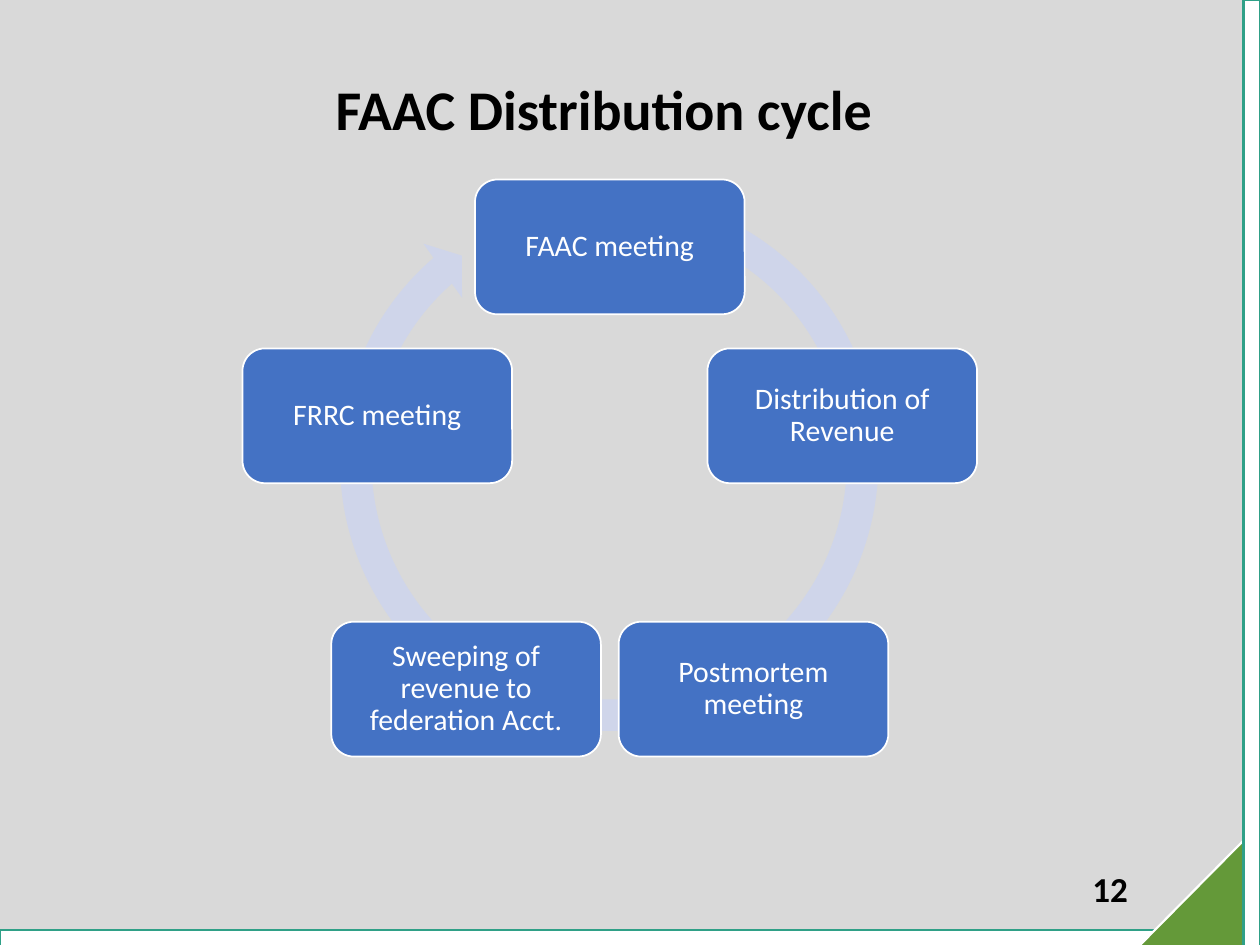
import math
from dataclasses import dataclass

import pptx
import pptx.dml.color
import pptx.enum.shapes
import pptx.enum.text
import pptx.util

Inches = pptx.util.Inches
Pt = pptx.util.Pt
Shape = pptx.enum.shapes.MSO_SHAPE
Align = pptx.enum.text.PP_ALIGN

COLOURS = {
    "background": "D9D9D9",
    "white": "FFFFFF",
    "teal": "2FA087",
    "green": "649939",
    "arrow": "CFD5EA",
    "step": "4472C4",
    "black": "000000",
}
STEPS = [
    "FAAC meeting",
    "Distribution of Revenue",
    "Postmortem meeting",
    "Sweeping of revenue to federation Acct.",
    "FRRC meeting",
]
CENTRE_X, CENTRE_Y, RADIUS = 4.84, 3.9, 1.94
STEP_WIDTH, STEP_HEIGHT = 2.14, 1.07


@dataclass(frozen=True)
class Box:
    left: float
    top: float
    width: float
    height: float

    def lengths(self) -> list:
        return [Inches(value) for value in (self.left, self.top, self.width, self.height)]


@dataclass(frozen=True)
class Figure:
    kind: Shape
    box: Box
    fill: str
    line: str = ""
    line_width: float = 1.25
    rotation: float = 0
    adjustments: tuple = ()


@dataclass(frozen=True)
class Label:
    text: str
    size: float
    colour: str
    bold: bool = False
    alignment: Align = Align.CENTER
    line_spacing: float = 1.0
    inset_x: float = 0.1
    inset_y: float = 0.05


FRAME = [
    Figure(Shape.RECTANGLE, Box(0, 7.38, 10, 0.13), "white", "teal"),
    Figure(Shape.RIGHT_TRIANGLE, Box(8.88, 6.63, 1.04, 1.03), "green", "white", rotation=270),
    Figure(Shape.RECTANGLE, Box(9.87, 0, 0.13, 7.75), "white", "teal"),
]
CYCLE_ARROW = Figure(
    Shape.CIRCULAR_ARROW,
    Box(2.56, 1.39, 4.55, 4.55),
    "arrow",
    adjustments=(0.055, 3.307, 137.364, 174.101, 0.058),
)
TEXTS = [
    (Box(8.42, 6.85, 0.63, 0.4), Label("12", 20, "black", True, Align.RIGHT)),
    (Box(0.92, 0.4, 7.75, 0.91), Label("FAAC Distribution cycle", 32, "black", True)),
]


def rgb(name: str) -> pptx.dml.color.RGBColor:
    """Return the named colour."""
    return pptx.dml.color.RGBColor.from_string(COLOURS[name])


def apply(target, values: dict) -> None:
    """Set every attribute in values on the target."""
    for name, value in values.items():
        setattr(target, name, value)


def draw_figure(slide, figure: Figure):
    """Draw a filled preset shape."""
    shape = slide.shapes.add_shape(figure.kind, *figure.box.lengths())
    shape.shadow.inherit = False
    shape.rotation = figure.rotation
    for index, value in enumerate(figure.adjustments):
        shape.adjustments[index] = value
    shape.fill.solid()
    shape.fill.fore_color.rgb = rgb(figure.fill)
    if figure.line:
        shape.line.color.rgb = rgb(figure.line)
        shape.line.width = Pt(figure.line_width)
    else:
        shape.line.fill.background()
    return shape


def write_label(shape, label: Label) -> None:
    """Write one formatted paragraph into a shape."""
    frame = shape.text_frame
    apply(frame, {
        "word_wrap": True,
        "vertical_anchor": pptx.enum.text.MSO_ANCHOR.MIDDLE,
        "margin_left": Inches(label.inset_x),
        "margin_right": Inches(label.inset_x),
        "margin_top": Inches(label.inset_y),
        "margin_bottom": Inches(label.inset_y),
    })
    paragraph = frame.paragraphs[0]
    apply(paragraph, {"alignment": label.alignment, "line_spacing": label.line_spacing})
    run = paragraph.add_run()
    run.text = label.text
    apply(run.font, {"name": "Calibri", "size": Pt(label.size), "bold": label.bold})
    run.font.color.rgb = rgb(label.colour)


def draw_step(slide, index: int, text: str) -> None:
    """Draw one step, spaced evenly clockwise from the top of the cycle."""
    angle = 2 * math.pi * index / len(STEPS)
    box = Box(
        CENTRE_X + RADIUS * math.sin(angle) - STEP_WIDTH / 2,
        CENTRE_Y - RADIUS * math.cos(angle) - STEP_HEIGHT / 2,
        STEP_WIDTH,
        STEP_HEIGHT,
    )
    shape = draw_figure(slide, Figure(Shape.ROUNDED_RECTANGLE, box, "step", "white", 1))
    write_label(shape, Label(text, 17, "white", line_spacing=0.9, inset_x=0.12, inset_y=0.12))


def main() -> None:
    """Build the distribution cycle slide."""
    presentation = pptx.Presentation()
    apply(presentation, {"slide_width": Inches(10), "slide_height": Inches(7.5)})
    slide = presentation.slides.add_slide(presentation.slide_layouts[6])
    slide.background.fill.solid()
    slide.background.fill.fore_color.rgb = rgb("background")
    for figure in FRAME:
        draw_figure(slide, figure)
    for box, label in TEXTS:
        write_label(slide.shapes.add_textbox(*box.lengths()), label)
    draw_figure(slide, CYCLE_ARROW)
    for index, text in enumerate(STEPS):
        draw_step(slide, index, text)
    presentation.save("out.pptx")


if __name__ == "__main__":
    main()
